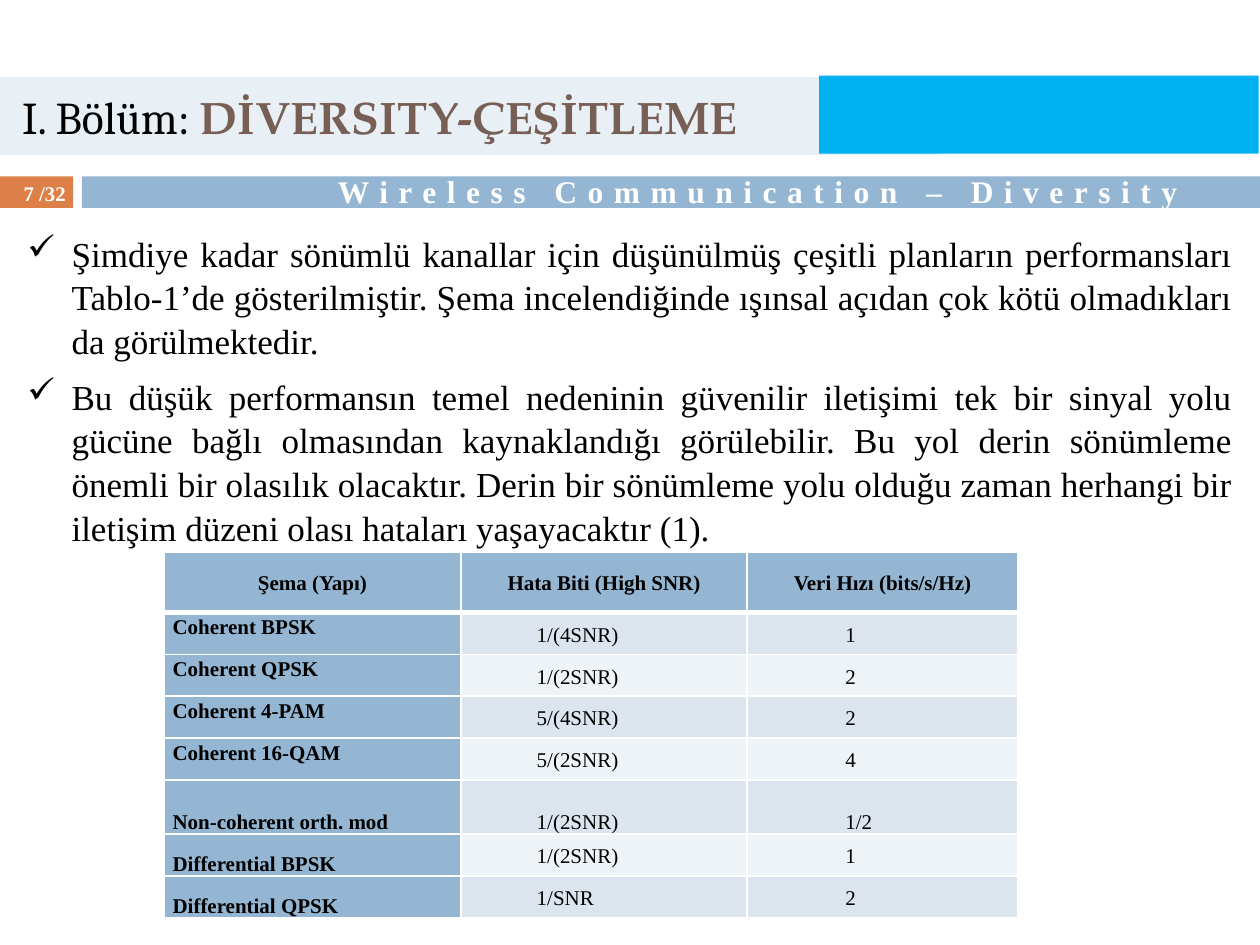
from dataclasses import dataclass, field
from typing import Any

from lxml.etree import SubElement
from pptx import Presentation
from pptx.dml.color import RGBColor
from pptx.enum.shapes import MSO_SHAPE
from pptx.enum.text import MSO_ANCHOR, PP_ALIGN
from pptx.oxml.ns import qn
from pptx.util import Inches, Pt

BLACK = RGBColor(0x00, 0x00, 0x00)
WHITE = RGBColor(0xFF, 0xFF, 0xFF)
ORANGE = RGBColor(0xDD, 0x80, 0x47)
STEEL = RGBColor(0x94, 0xB6, 0xD2)
PALE = RGBColor(0xE8, 0xF0, 0xF6)
SKY = RGBColor(0x00, 0xB0, 0xF0)
BROWN = RGBColor(0x77, 0x5F, 0x55)
BAND_DARK = RGBColor(0xDC, 0xE5, 0xEE)
BAND_LIGHT = RGBColor(0xEE, 0xF3, 0xF7)

GRID_COLUMNS, GRID_ROWS = 100, 75
UNIT = Inches(0.1)
SERIF = "Times New Roman"
CELL_INSET = 0.7
BULLET_INDENT = round(3.5 * UNIT)


@dataclass(frozen=True)
class Area:
    left: float
    top: float
    width: float
    height: float

    def lengths(self) -> list[int]:
        return [round(value * UNIT) for value in (self.left, self.top, self.width, self.height)]


@dataclass(frozen=True)
class Style:
    size: float
    color: RGBColor = BLACK
    bold: bool = False
    name: str = SERIF
    spacing: float = 0


@dataclass(frozen=True)
class Span:
    text: str
    style: Style


@dataclass(frozen=True)
class Label:
    area: Area
    paras: list[list[Span]]
    frame: dict[str, Any] = field(default_factory=dict)
    para: dict[str, Any] = field(default_factory=dict)
    bullet: str = ""


@dataclass(frozen=True)
class Scheme:
    name: str
    error: str
    rate: str
    height: float = 3.33
    name_anchor: MSO_ANCHOR = MSO_ANCHOR.TOP
    value_anchor: MSO_ANCHOR = MSO_ANCHOR.MIDDLE


BODY = Style(20)
BARS = [
    (Area(0, 14, 5.8, 2.5), ORANGE),
    (Area(6.5, 14, 93.5, 2.5), STEEL),
    (Area(0, 6.1, 74.4, 6.2), PALE),
    (Area(65, 6, 34.9, 6.2), SKY),
]
LABELS = [
    Label(
        Area(7.5, 13.8, 89, 2.7),
        [[Span("Wireless Communication – Diversity", Style(18, WHITE, True, spacing=6))]],
        {"vertical_anchor": MSO_ANCHOR.MIDDLE, "margin_right": 3 * UNIT},
        {"alignment": PP_ALIGN.RIGHT},
    ),
    Label(
        Area(0, 14, 7.1, 2.7),
        [[Span("7 /32", Style(11.9, WHITE, True))]],
        {"vertical_anchor": MSO_ANCHOR.MIDDLE},
        {"alignment": PP_ALIGN.CENTER},
    ),
    Label(
        Area(0, 6.1, 74.4, 6.2),
        [[
            Span("I. Bölüm: ", Style(26, name="Cambria")),
            Span("DİVERSITY-ÇEŞİTLEME", Style(26, BROWN, True, "TeX Gyre Pagella")),
        ]],
        {"vertical_anchor": MSO_ANCHOR.MIDDLE, "margin_left": round(1.75 * UNIT)},
    ),
    Label(
        Area(1.2, 17.8, 97.6, 57.2),
        [
            [Span(
                "Şimdiye kadar sönümlü kanallar için düşünülmüş çeşitli planların "
                "performansları Tablo-1’de gösterilmiştir. Şema incelendiğinde ışınsal "
                "açıdan çok kötü olmadıkları da görülmektedir.", BODY)],
            [Span(
                "Bu düşük performansın temel nedeninin güvenilir iletişimi tek bir sinyal "
                "yolu gücüne bağlı olmasından kaynaklandığı görülebilir. Bu yol derin "
                "sönümleme önemli bir olasılık olacaktır. Derin bir sönümleme yolu olduğu "
                "zaman herhangi bir iletişim düzeni olası hataları yaşayacaktır (1).", BODY)],
        ],
        {"margin_left": UNIT, "margin_right": UNIT, "margin_top": UNIT // 2},
        {"alignment": PP_ALIGN.JUSTIFY, "space_before": Pt(7), "line_spacing": 1.04},
        "✓",
    ),
]

TABLE_AREA = Area(13, 43.8, 67.8, 29.1)
TABLE_COLUMNS = [23.6, 22.7, 21.5]
VALUE_INDENTS = [0, 5.3, 7.1]
HEADER = Scheme("Şema (Yapı)", "Hata Biti (High SNR)", "Veri Hızı (bits/s/Hz)", 4.8, MSO_ANCHOR.MIDDLE)
SCHEMES = [
    HEADER,
    Scheme("Coherent BPSK", "1/(4SNR)", "1"),
    Scheme("Coherent QPSK", "1/(2SNR)", "2"),
    Scheme("Coherent 4-PAM", "5/(4SNR)", "2"),
    Scheme("Coherent 16-QAM", "5/(2SNR)", "4"),
    Scheme("Non-coherent orth. mod", "1/(2SNR)", "1/2", 4.3, MSO_ANCHOR.BOTTOM, MSO_ANCHOR.BOTTOM),
    Scheme("Differential BPSK", "1/(2SNR)", "1", name_anchor=MSO_ANCHOR.BOTTOM),
    Scheme("Differential QPSK", "1/SNR", "2", name_anchor=MSO_ANCHOR.BOTTOM),
]


def apply(target: Any, values: dict[str, Any]) -> None:
    for name, value in values.items():
        setattr(target, name, value)


def add_span(para: Any, span: Span) -> None:
    run = para.add_run()
    run.text = span.text
    style = span.style
    apply(run.font, {"size": Pt(style.size), "bold": style.bold, "name": style.name})
    run.font.color.rgb = style.color
    if style.spacing:
        run.font._element.set("spc", str(round(style.spacing * 100)))


def add_bullet(para: Any, symbol: str) -> None:
    properties = para._p.get_or_add_pPr()
    properties.set("marL", str(BULLET_INDENT))
    properties.set("indent", str(-BULLET_INDENT))
    SubElement(properties, qn("a:buChar")).set("char", symbol)


def draw_bar(page: Any, area: Area, color: RGBColor) -> None:
    bar = page.shapes.add_shape(MSO_SHAPE.RECTANGLE, *area.lengths())
    bar.shadow.inherit = False
    bar.fill.solid()
    bar.fill.fore_color.rgb = color
    bar.line.fill.background()


def draw_label(page: Any, label: Label) -> None:
    frame = page.shapes.add_textbox(*label.area.lengths()).text_frame
    margins = {f"margin_{side}": 0 for side in ("left", "right", "top", "bottom")}
    apply(frame, margins | {"word_wrap": True} | label.frame)
    for index, spans in enumerate(label.paras):
        para = frame.add_paragraph() if index else frame.paragraphs[0]
        apply(para, label.para)
        if label.bullet:
            add_bullet(para, label.bullet)
        for span in spans:
            add_span(para, span)


def add_borders(cell: Any, widths: dict[str, float]) -> None:
    properties = cell._tc.get_or_add_tcPr()
    for side, width in widths.items():
        line = SubElement(properties, qn(f"a:ln{side}"))
        line.set("w", str(Pt(width)))
        fill = SubElement(line, qn("a:solidFill"))
        SubElement(fill, qn("a:srgbClr")).set("val", str(WHITE))


def draw_cell(cell: Any, scheme: Scheme, row: int, column: int) -> None:
    is_header, is_name = row == 0, column == 0
    add_borders(cell, {"L": 1, "R": 1, "T": 3 if row == 1 else 1, "B": 3 if is_header else 1})
    cell.fill.solid()
    band = BAND_DARK if row % 2 else BAND_LIGHT
    cell.fill.fore_color.rgb = STEEL if is_header or is_name else band
    indent = 0 if is_header else VALUE_INDENTS[column]
    apply(cell, {
        "margin_left": round((CELL_INSET + indent) * UNIT),
        "margin_right": round(CELL_INSET * UNIT),
        "margin_top": 0,
        "margin_bottom": 0,
        "vertical_anchor": scheme.name_anchor if is_name else scheme.value_anchor,
    })
    para = cell.text_frame.paragraphs[0]
    apply(para, {"line_spacing": 1.15, "alignment": PP_ALIGN.CENTER if is_header else PP_ALIGN.LEFT})
    text = (scheme.name, scheme.error, scheme.rate)[column]
    add_span(para, Span(text, Style(12, bold=is_header or is_name)))


def draw_table(page: Any) -> None:
    table = page.shapes.add_table(len(SCHEMES), len(TABLE_COLUMNS), *TABLE_AREA.lengths()).table
    apply(table, {"first_row": False, "horz_banding": False})
    for column, width in enumerate(TABLE_COLUMNS):
        table.columns[column].width = round(width * UNIT)
    for row, scheme in enumerate(SCHEMES):
        table.rows[row].height = round(scheme.height * UNIT)
        for column in range(len(TABLE_COLUMNS)):
            draw_cell(table.cell(row, column), scheme, row, column)


def main() -> None:
    deck = Presentation()
    apply(deck, {"slide_width": GRID_COLUMNS * UNIT, "slide_height": GRID_ROWS * UNIT})
    page = deck.slides.add_slide(deck.slide_layouts[6])
    for area, color in BARS:
        draw_bar(page, area, color)
    for label in LABELS:
        draw_label(page, label)
    draw_table(page)
    deck.save("out.pptx")


if __name__ == "__main__":
    main()
